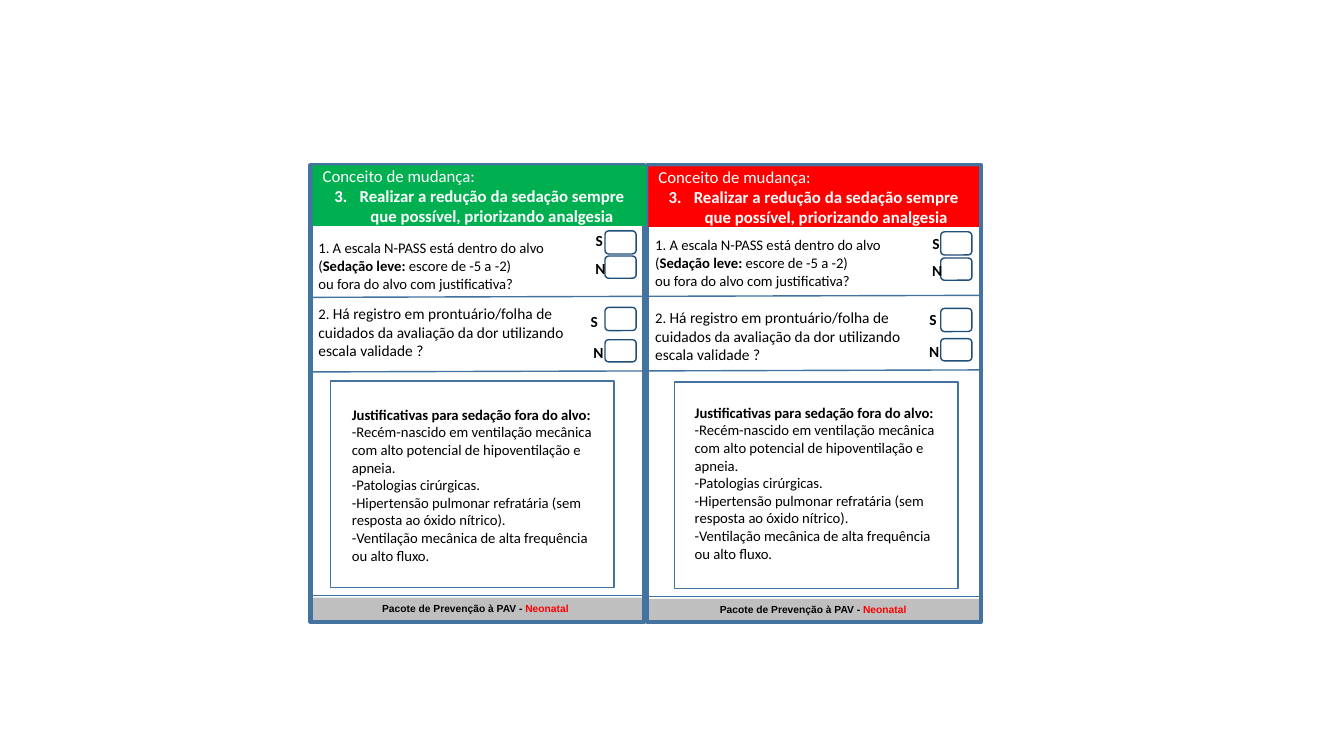
from dataclasses import dataclass

from lxml.etree import SubElement
from pptx import Presentation
from pptx.dml.color import RGBColor
from pptx.enum.shapes import MSO_CONNECTOR, MSO_SHAPE
from pptx.enum.text import MSO_ANCHOR, MSO_AUTO_SIZE, PP_ALIGN
from pptx.oxml.ns import qn
from pptx.util import Pt

SCALE = 9144  # EMU per px, 100 px to the inch


@dataclass(frozen=True)
class Theme:
    body_font: str = "Calibri"
    footer_font: str = "Arial"
    black: str = "000000"
    white: str = "FFFFFF"
    red: str = "FF0000"
    green: str = "00B050"
    grey: str = "BFBFBF"
    blue: str = "43739E"
    navy: str = "1F4E79"
    header_size: float = 12
    text_size: float = 10.5
    large_size: float = 11
    footer_size: float = 7.3
    thin: float = 1
    thick: float = 3


THEME = Theme()


@dataclass(frozen=True)
class Area:
    x: int
    y: int
    width: int
    height: int


@dataclass(frozen=True)
class Span:
    text: str
    size: float = THEME.text_size
    bold: bool = False
    color: str = THEME.black
    font: str = THEME.body_font


@dataclass(frozen=True)
class Para:
    spans: tuple[Span, ...]
    align: PP_ALIGN = PP_ALIGN.LEFT
    number: int = 0


@dataclass(frozen=True)
class Choice:
    letter: str
    label_x: int
    label_y: int
    box_y: int
    box_height: int


@dataclass(frozen=True)
class Panel:
    header: Area
    header_color: str
    header_slot: int
    list_slot: int
    frame: Area
    footer: Area
    questions: tuple[Area, Area]
    card: Area
    reasons: Area
    box_x: int
    choices: tuple[Choice, ...]
    rules: tuple[tuple[int, int, int, int], ...]


HEADER = (
    Para((Span("Conceito de mudança:", THEME.header_size, color=THEME.white),)),
    Para((Span("Realizar a redução da sedação sempre que possível, priorizando analgesia",
               THEME.header_size, True, THEME.white),), PP_ALIGN.CENTER, 3),
)
FOOTER = (
    Para((Span("Pacote de Prevenção à PAV - ", THEME.footer_size, True, THEME.black, THEME.footer_font),
          Span("Neonatal", THEME.footer_size, True, THEME.red, THEME.footer_font)), PP_ALIGN.CENTER),
)
QUESTIONS = (
    (Para((Span("1. A escala N-PASS está dentro do alvo ("),
           Span("Sedação leve: ", bold=True),
           Span("escore de -5 a -2)"))),
     Para((Span("ou fora do alvo com justificativa?"),))),
    (Para((Span("2. "),
           Span("Há registro em prontuário/folha de cuidados da avaliação da dor utilizando escala validade ?",
                THEME.large_size))),),
)
REASONS = (Para((Span("Justificativas para sedação fora do alvo:", bold=True),)),) + tuple(
    Para((Span(reason),)) for reason in (
        "-Recém-nascido em ventilação mecânica com alto potencial de hipoventilação e apneia.",
        "-Patologias cirúrgicas.",
        "-Hipertensão pulmonar refratária (sem resposta ao óxido nítrico).",
        "-Ventilação mecânica de alta frequência ou alto fluxo.",
    ))
PANELS = (
    Panel(Area(310, 164, 331, 60), THEME.green, 0, 2,
          Area(308, 164, 331, 453), Area(306, 593, 331, 22),
          (Area(306, 232, 273, 63), Area(306, 298, 273, 63)),
          Area(328, 378, 281, 205), Area(339, 387, 260, 188), 600,
          (Choice("S", 583, 231, 229, 23), Choice("N", 584, 258, 254, 22),
           Choice("S", 578, 311, 305, 23), Choice("N", 582, 342, 337, 22)),
          ((306, 295, 642, 294), (306, 369, 642, 368), (308, 591, 643, 591))),
    Panel(Area(643, 165, 328, 60), THEME.red, 1, 4,
          Area(642, 164, 331, 453), Area(641, 594, 331, 22),
          (Area(640, 229, 273, 63), Area(640, 302, 273, 63)),
          Area(669, 379, 281, 205), Area(679, 385, 260, 188), 933,
          (Choice("S", 917, 233, 230, 23), Choice("N", 918, 260, 256, 22),
           Choice("S", 914, 309, 306, 23), Choice("N", 915, 341, 336, 22)),
          ((637, 294, 973, 293), (637, 368, 973, 367), (641, 592, 975, 592))),
)


def px(*lengths: int) -> list[int]:
    return [length * SCALE for length in lengths]


def area_emu(area: Area) -> list[int]:
    return px(area.x, area.y, area.width, area.height)


def write(shape, paras: tuple[Para, ...], side_margin: int = 10, wrap: bool = True) -> None:
    frame = shape.text_frame
    frame.auto_size = MSO_AUTO_SIZE.NONE
    frame.word_wrap = wrap
    frame.vertical_anchor = MSO_ANCHOR.MIDDLE
    frame.margin_left, frame.margin_right, frame.margin_top, frame.margin_bottom = px(
        side_margin, side_margin, 5, 5)
    for index, content in enumerate(paras):
        para = frame.paragraphs[0] if index == 0 else frame.add_paragraph()
        para.alignment = content.align
        para.space_before = Pt(0)
        set_bullet(para, content.number)
        for span in content.spans:
            run = para.add_run()
            run.text = span.text
            run.font.name = span.font
            run.font.size = Pt(span.size)
            run.font.bold = span.bold
            run.font.color.rgb = RGBColor.from_string(span.color)


def set_bullet(para, number: int) -> None:
    """Number the paragraph from the given value, or clear its bullet when it is 0."""
    properties = para._p.get_or_add_pPr()
    hanging = 25 * SCALE if number else 0
    properties.set("marL", str(hanging))
    properties.set("indent", str(-hanging))
    if number:
        SubElement(properties, qn("a:buFont"), typeface="+mj-lt")
        SubElement(properties, qn("a:buAutoNum"), type="arabicPeriod", startAt=str(number))
    else:
        SubElement(properties, qn("a:buNone"))


def add_box(page, area: Area, fill: str = "", line: str = "", weight: float = THEME.thin,
            kind: MSO_SHAPE = MSO_SHAPE.RECTANGLE):
    box = page.shapes.add_shape(kind, *area_emu(area))
    box.shadow.inherit = False
    if fill:
        box.fill.solid()
        box.fill.fore_color.rgb = RGBColor.from_string(fill)
    else:
        box.fill.background()
    if line:
        box.line.color.rgb = RGBColor.from_string(line)
        box.line.width = Pt(weight)
    else:
        box.line.fill.background()
    return box


def add_text(page, area: Area, paras: tuple[Para, ...], side_margin: int = 10, wrap: bool = True) -> None:
    write(page.shapes.add_textbox(*area_emu(area)), paras, side_margin, wrap)


def place_slot(page, slot: int, area: Area, paras: tuple[Para, ...]):
    """Move a layout placeholder to the area, bring it to the front and fill in its text."""
    holder = next(item for item in page.placeholders if item.placeholder_format.idx == slot)
    holder.left, holder.top, holder.width, holder.height = area_emu(area)
    holder.element.getparent().append(holder.element)
    write(holder, paras)
    return holder


def add_rule(page, ends: tuple[int, int, int, int]) -> None:
    rule = page.shapes.add_connector(MSO_CONNECTOR.STRAIGHT, *px(*ends))
    rule.line.color.rgb = RGBColor.from_string(THEME.blue)
    rule.line.width = Pt(THEME.thin)
    SubElement(rule.element.spPr, qn("a:effectLst"))


def draw_panel(page, panel: Panel) -> None:
    header = place_slot(page, panel.header_slot, panel.header, HEADER)
    header.fill.solid()
    header.fill.fore_color.rgb = RGBColor.from_string(panel.header_color)
    for area, paras in zip(panel.questions, QUESTIONS):
        add_text(page, area, paras)
    for choice in panel.choices:
        add_box(page, Area(panel.box_x, choice.box_y, 31, choice.box_height),
                line=THEME.navy, kind=MSO_SHAPE.ROUNDED_RECTANGLE)
        letter = Span(choice.letter, THEME.large_size, True)
        add_text(page, Area(choice.label_x, choice.label_y, 23, 16),
                 (Para((letter,), PP_ALIGN.CENTER),), 0, False)
    add_box(page, panel.card, THEME.white, THEME.blue)
    place_slot(page, panel.list_slot, panel.reasons, REASONS)
    for ends in panel.rules:
        add_rule(page, ends)


def main() -> None:
    deck = Presentation()
    deck.slide_width, deck.slide_height = px(1333, 750)
    page = deck.slides.add_slide(deck.slide_layouts.get_by_name("Comparison"))
    for panel in PANELS:
        write(add_box(page, panel.footer, THEME.grey), FOOTER)
    for panel in PANELS:
        add_box(page, panel.frame, line=THEME.blue, weight=THEME.thick)
    for panel in PANELS:
        draw_panel(page, panel)
    for holder in list(page.placeholders):
        if not holder.text_frame.text:
            holder.element.getparent().remove(holder.element)
    deck.save("out.pptx")


if __name__ == "__main__":
    main()
